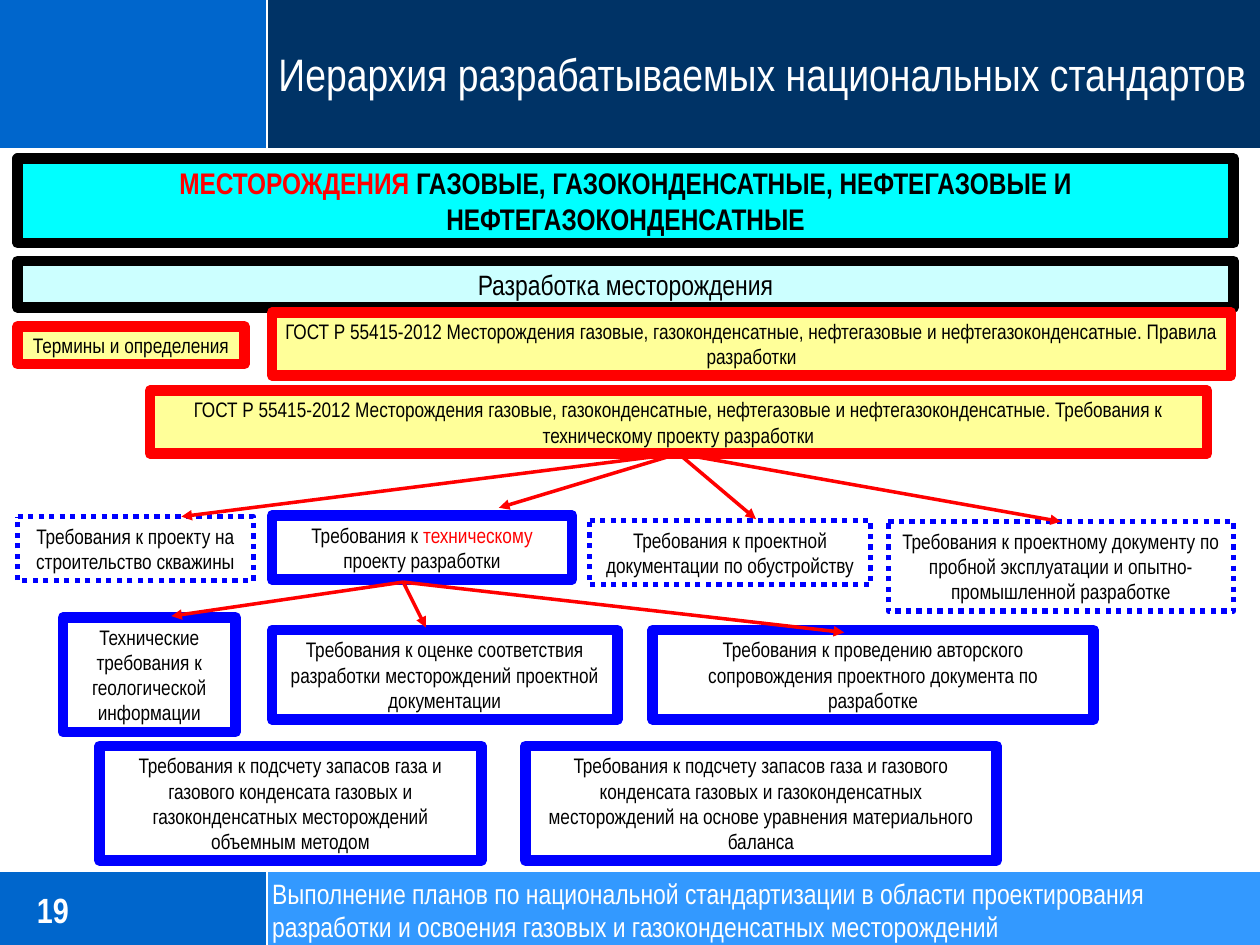
from dataclasses import dataclass

from lxml import etree
from pptx import Presentation
from pptx.dml.color import RGBColor
from pptx.enum.dml import MSO_LINE
from pptx.enum.shapes import MSO_CONNECTOR, MSO_SHAPE
from pptx.enum.text import MSO_ANCHOR, PP_ALIGN
from pptx.oxml.ns import qn
from pptx.util import Inches, Pt

RECTANGLE = MSO_SHAPE.RECTANGLE
PROCESS = MSO_SHAPE.FLOWCHART_PROCESS
STRAIGHT = MSO_CONNECTOR.STRAIGHT
DOTTED = MSO_LINE.ROUND_DOT
MIDDLE = MSO_ANCHOR.MIDDLE
LEFT, CENTER = PP_ALIGN.LEFT, PP_ALIGN.CENTER
TOP_SIDE, BOTTOM_SIDE = 0, 2
COLUMNS, ROWS = 100, 75


@dataclass(frozen=True)
class Theme:
    font: str = "Arial Narrow"
    white: str = "FFFFFF"
    black: str = "000000"
    red: str = "FF0000"
    blue: str = "0000FF"
    corner: str = "0066CC"
    header: str = "003366"
    footer: str = "3399FF"
    cyan: str = "00FFFF"
    pale_cyan: str = "CCFFFF"
    yellow: str = "FFFF99"
    title: int = 26
    number: int = 20
    heading: int = 17
    subheading: int = 16
    body: int = 12
    thick: int = 6
    dots: int = 3
    arrow: int = 2
    rule: float = 1.25


class SlideBuilder:
    def __init__(self, deck, theme):
        self.theme = theme
        self.column = deck.slide_width / COLUMNS
        self.row = deck.slide_height / ROWS
        self.page = deck.slides.add_slide(deck.slide_layouts[6])

    def place(self, *lengths):
        units = (self.column, self.row) * 2
        return [round(length * unit) for length, unit in zip(lengths, units)]

    def set_text(self, shape, spans, size, color, align=CENTER, bold=False):
        frame = shape.text_frame
        frame.word_wrap = True
        frame.vertical_anchor = MIDDLE
        para = frame.paragraphs[0]
        para.alignment = align
        para.font.name = self.theme.font
        para.font.size = Pt(size)
        para.font.bold = bold
        para.font.color.rgb = RGBColor.from_string(color)
        for text, accent in spans:
            span = para.add_run()
            span.text = text
            if accent:
                span.font.color.rgb = RGBColor.from_string(accent)

    def band(self, area, color):
        shape = self.page.shapes.add_shape(RECTANGLE, *self.place(*area))
        shape.shadow.inherit = False
        shape.fill.solid()
        shape.fill.fore_color.rgb = RGBColor.from_string(color)
        shape.line.fill.background()

    def label(self, area, text, size, align=LEFT, bold=False):
        shape = self.page.shapes.add_textbox(*self.place(*area))
        frame = shape.text_frame
        frame.margin_left = frame.margin_right = 0
        frame.margin_top = frame.margin_bottom = 0
        self.set_text(shape, [(text, None)], size, self.theme.white, align, bold)

    def box(self, area, *spans, border=None, fill=None, dotted=False, size=None, bold=False):
        theme = self.theme
        shape = self.page.shapes.add_shape(PROCESS, *self.place(*area))
        shape.shadow.inherit = False
        if fill:
            shape.fill.solid()
            shape.fill.fore_color.rgb = RGBColor.from_string(fill)
        else:
            shape.fill.background()
        shape.line.color.rgb = RGBColor.from_string(border or theme.blue)
        shape.line.width = Pt(theme.dots if dotted else theme.thick)
        if dotted:
            shape.line.dash_style = DOTTED
        spans = [span if isinstance(span, tuple) else (span, None) for span in spans]
        self.set_text(shape, spans, size or theme.body, theme.black, bold=bold)
        return shape

    def line(self, start, end, color, width):
        connector = self.page.shapes.add_connector(STRAIGHT, *self.place(*start, *end))
        connector.line.color.rgb = RGBColor.from_string(color)
        connector.line.width = Pt(width)
        etree.SubElement(connector._element.spPr, qn("a:effectLst"))
        return connector

    def rule(self, start, end):
        self.line(start, end, self.theme.white, self.theme.rule)

    def arrow(self, start, end, source=None, target=None):
        connector = self.line(start, end, self.theme.red, self.theme.arrow)
        outline = connector._element.spPr.get_or_add_ln()
        etree.SubElement(outline, qn("a:tailEnd"), type="triangle")
        if source:
            connector.begin_connect(source, BOTTOM_SIDE)
        if target:
            connector.end_connect(target, TOP_SIDE)


def main():
    deck = Presentation()
    deck.slide_width, deck.slide_height = Inches(10), Inches(7.5)
    theme = Theme()
    slide = SlideBuilder(deck, theme)

    split, header_end, footer_start = 21.2, 11.8, 69.1
    for top, bottom, color in ((footer_start, ROWS, theme.footer), (0, header_end, theme.header)):
        slide.band((0, top, split, bottom - top), theme.corner)
        slide.band((split, top, COLUMNS - split, bottom - top), color)
        slide.rule((split, top), (split, bottom))
    for row in (footer_start, header_end):
        slide.rule((0, row), (COLUMNS, row))

    slide.label((21.1, 3.6, 78.9, 4.4), "Иерархия разрабатываемых национальных стандартов",
                theme.title, CENTER)
    slide.label((0, 69.6, 8.4, 5.2), "19", theme.number, CENTER, True)
    slide.label((21.6, 69.6, 75.9, 5.2),
                "Выполнение планов по национальной стандартизации в области проектирования "
                "разработки и освоения газовых и газоконденсатных месторождений",
                theme.subheading)

    slide.box((1.4, 12.6, 96.5, 6.7), ("МЕСТОРОЖДЕНИЯ ", theme.red),
              "ГАЗОВЫЕ, ГАЗОКОНДЕНСАТНЫЕ, НЕФТЕГАЗОВЫЕ И НЕФТЕГАЗОКОНДЕНСАТНЫЕ",
              border=theme.black, fill=theme.cyan, size=theme.heading, bold=True)
    slide.box((1.4, 20.7, 96.5, 3.7), "Разработка месторождения",
              border=theme.black, fill=theme.pale_cyan, size=theme.subheading)

    standard = ("ГОСТ Р 55415-2012 Месторождения газовые, газоконденсатные, "
                "нефтегазовые и нефтегазоконденсатные. ")
    approved = {"border": theme.red, "fill": theme.yellow}
    project_standard = slide.box((11.9, 31, 83.9, 5),
                                 standard + "Требования к техническому проекту разработки", **approved)
    slide.box((21.6, 24.8, 76.1, 5), standard + "Правила разработки", **approved)
    slide.box((1.4, 25.9, 18, 3), "Термины и определения", **approved)

    slide.box((21.6, 40.9, 23.8, 5.1), "Требования к ", ("техническому ", theme.red),
              "проекту разработки")
    planned = (
        ((1.4, 41, 18.7, 5.1), "Требования к проекту на строительство скважины"),
        ((46.8, 41.3, 22.3, 5.1), "Требования к проектной документации по обустройству"),
        ((70.5, 41.4, 27.4, 7.1), "Требования к проектному документу по пробной эксплуатации "
                                  "и опытно-промышленной разработке"),
    )
    planned_boxes = [slide.box(area, text, dotted=True) for area, text in planned]

    reserves = "Требования к подсчету запасов газа и газового конденсата газовых и газоконденсатных месторождений "
    requirements = (
        ((5, 49, 13.7, 9.1), "Технические требования к геологической информации"),
        ((21.6, 50, 27.4, 7.1), "Требования к оценке соответствия разработки месторождений "
                                "проектной документации"),
        ((51.8, 50, 35, 7.1), "Требования к проведению авторского сопровождения "
                              "проектного документа по разработке"),
        ((7.9, 59.2, 30.3, 9.1), reserves + "объемным методом"),
        ((41.7, 59.2, 37.4, 9.1), reserves + "на основе уравнения материального баланса"),
    )
    for area, text in requirements:
        slide.box(area, text)

    for end, target in (((39.6, 40.3), None), ((60, 41.2), None), ((14.4, 41), None),
                        ((83.8, 41.4), planned_boxes[-1])):
        slide.arrow((53.3, 36), end, project_standard, target)
    for end in ((13.6, 48.9), (33.8, 49.8), (67, 50.2)):
        slide.arrow((32, 46.2), end)

    deck.save("out.pptx")


if __name__ == "__main__":
    main()
